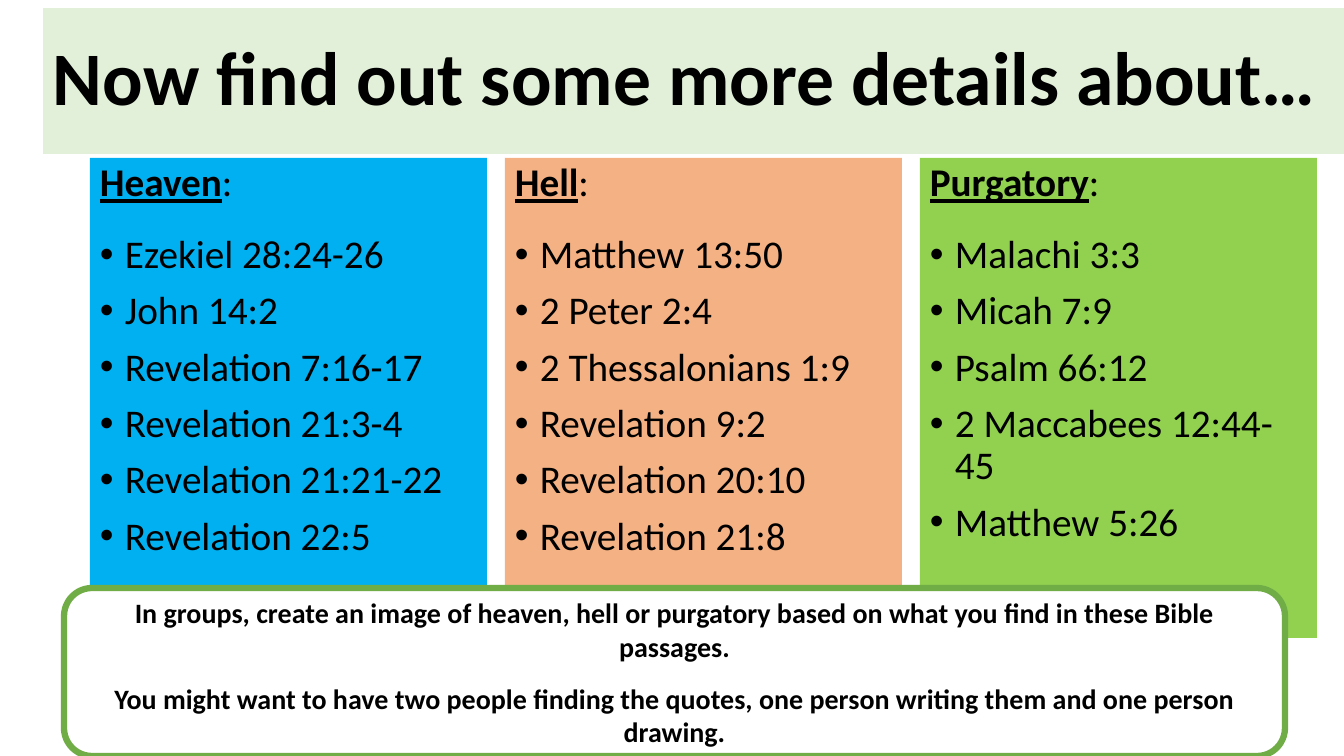
"""Build a slide of Bible passages on heaven, hell and purgatory."""
from lxml import etree
from pptx import Presentation
from pptx.dml.color import RGBColor
from pptx.enum.shapes import MSO_SHAPE
from pptx.enum.text import MSO_ANCHOR, PP_ALIGN
from pptx.oxml.ns import qn
from pptx.util import Pt

RECT, ROUND = MSO_SHAPE.RECTANGLE, MSO_SHAPE.ROUNDED_RECTANGLE
TOP, MIDDLE = MSO_ANCHOR.TOP, MSO_ANCHOR.MIDDLE
LEFT, CENTER = PP_ALIGN.LEFT, PP_ALIGN.CENTER

TITLE = "Now find out some more details about…"
TOPICS = [
    ("Heaven", "00B0F0", ["Ezekiel 28:24-26", "John 14:2", "Revelation 7:16-17",
                          "Revelation 21:3-4", "Revelation 21:21-22", "Revelation 22:5"]),
    ("Hell", "F4B183", ["Matthew 13:50", "2 Peter 2:4", "2 Thessalonians 1:9",
                        "Revelation 9:2", "Revelation 20:10", "Revelation 21:8"]),
    ("Purgatory", "92D050", ["Malachi 3:3", "Micah 7:9", "Psalm 66:12",
                             "2 Maccabees 12:44-45", "Matthew 5:26"]),
]
TASKS = [
    "In groups, create an image of heaven, hell or purgatory based on what you find in these Bible passages.",
    "You might want to have two people finding the quotes, one person writing them and one person drawing.",
]
THEME = {"font": "Calibri", "ink": "000000", "band": "E2F0D9", "paper": "FFFFFF",
         "edge": "70AD47", "title": 54, "body": 28, "task": 20}

WIDE, HIGH = 1344, 756
SCALE = 12192000 / WIDE
COL_X, COL_Y, COL_W, COL_H, COL_GAP = 90, 158, 397, 480, 18
INDENT = 25


def emu(px):
    return round(px * SCALE)


def panel(slide, kind, box, fill, anchor):
    shape = slide.shapes.add_shape(kind, *map(emu, box))
    shape.shadow.inherit = False
    shape.fill.solid()
    shape.fill.fore_color.rgb = RGBColor.from_string(fill)
    shape.line.fill.background()
    shape.text_frame.word_wrap = True
    shape.text_frame.vertical_anchor = anchor
    return shape


def add_para(frame, first, align=LEFT, space=0, line=0.9):
    para = frame.paragraphs[0] if first else frame.add_paragraph()
    para.alignment = align
    para.line_spacing = line
    para.space_before = Pt(space)
    return para


def add_run(para, text, size, bold=False, under=False):
    run = para.add_run()
    run.text = text
    font = run.font
    font.name, font.size = THEME["font"], Pt(size)
    font.bold, font.underline = bold, under
    font.color.rgb = RGBColor.from_string(THEME["ink"])


def add_bullet(para):
    props = para._p.get_or_add_pPr()
    props.set("marL", str(emu(INDENT)))
    props.set("indent", str(-emu(INDENT)))
    etree.SubElement(props, qn("a:buFont")).set("typeface", "Arial")
    etree.SubElement(props, qn("a:buChar")).set("char", "•")


def add_topic(slide, col, name, fill, verses):
    left = COL_X + col * (COL_W + COL_GAP)
    frame = panel(slide, RECT, (left, COL_Y, COL_W, COL_H), fill, TOP).text_frame
    head = add_para(frame, True)
    add_run(head, name, THEME["body"], True, True)
    add_run(head, ":", THEME["body"])
    for row, verse in enumerate(verses):
        para = add_para(frame, False, space=10 if row else 21)
        add_bullet(para)
        add_run(para, verse, THEME["body"])


def main():
    deck = Presentation()
    deck.slide_width, deck.slide_height = emu(WIDE), emu(HIGH)
    slide = deck.slides.add_slide(deck.slide_layouts[6])

    band = panel(slide, RECT, (43, 8, 1316, 146), THEME["band"], MIDDLE)
    add_run(add_para(band.text_frame, True), TITLE, THEME["title"], True)

    for col, topic in enumerate(TOPICS):
        add_topic(slide, col, *topic)

    card = panel(slide, ROUND, (64, 588, 1221, 168), THEME["paper"], MIDDLE)
    card.line.color.rgb = RGBColor.from_string(THEME["edge"])
    card.line.width = Pt(4.5)
    for row, task in enumerate(TASKS):
        para = add_para(card.text_frame, row == 0, CENTER, 13 if row else 0, 1.0)
        add_run(para, task, THEME["task"], True)

    deck.save("out.pptx")


if __name__ == "__main__":
    main()
